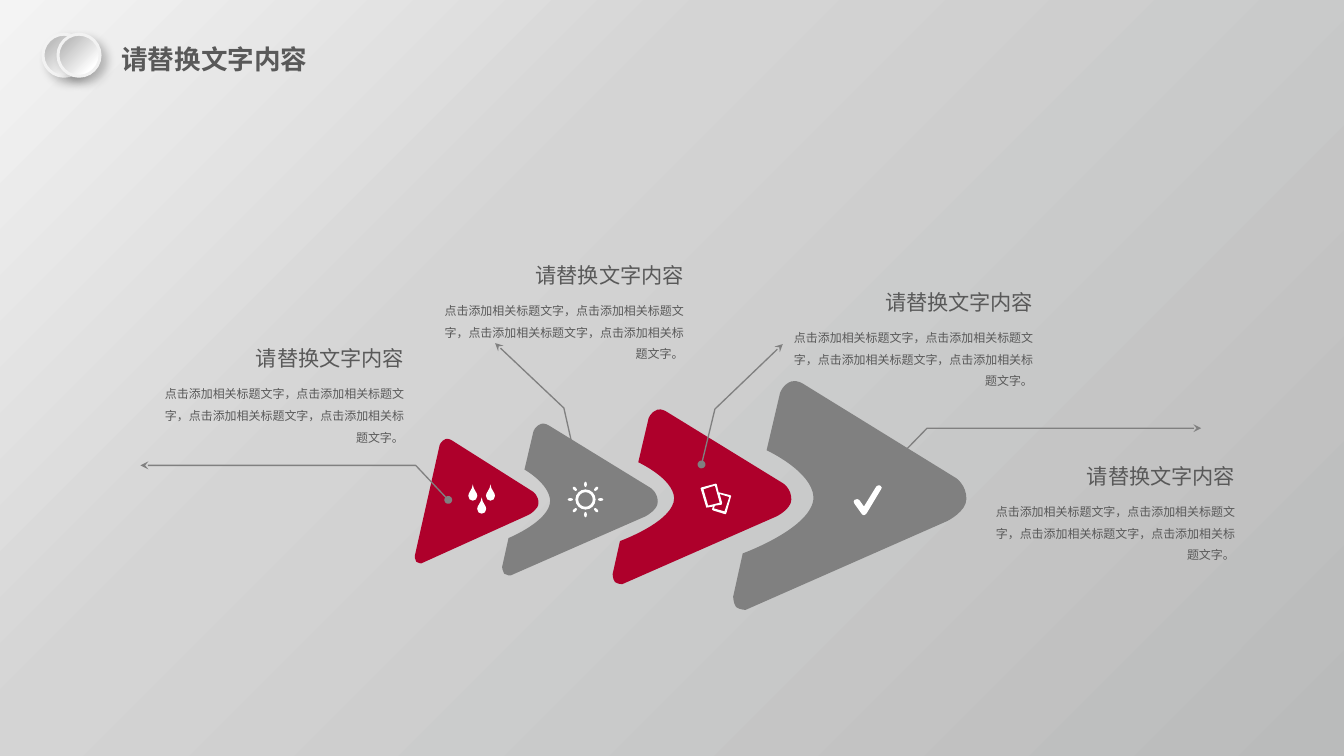
import math
from dataclasses import dataclass

from lxml import etree
from pptx import Presentation
from pptx.dml.color import RGBColor
from pptx.enum.shapes import MSO_SHAPE
from pptx.enum.text import MSO_ANCHOR, MSO_AUTO_SIZE, PP_ALIGN
from pptx.oxml.ns import qn
from pptx.util import Pt

OVAL = MSO_SHAPE.OVAL
TOP, MIDDLE = MSO_ANCHOR.TOP, MSO_ANCHOR.MIDDLE
LEFT, RIGHT = PP_ALIGN.LEFT, PP_ALIGN.RIGHT
FIT_SHAPE = MSO_AUTO_SIZE.SHAPE_TO_FIT_TEXT

RED = RGBColor(0xAE, 0x00, 0x2B)
GRAY = RGBColor(0x80, 0x80, 0x80)
TEXT_GRAY = RGBColor(0x59, 0x59, 0x59)
WHITE = RGBColor(0xFF, 0xFF, 0xFF)
RIM = RGBColor(0xF2, 0xF2, 0xF2)
BLACK = RGBColor(0x00, 0x00, 0x00)
SILVER = RGBColor(0xBF, 0xBF, 0xBF)
BACKGROUND_STOPS = [(0, RGBColor(0xF4, 0xF4, 0xF4)), (35, RGBColor(0xD4, 0xD4, 0xD4)),
                    (100, RGBColor(0xBA, 0xBB, 0xBB))]
DISC_STOPS = [(20, SILVER), (80, WHITE), (100, WHITE)]

TITLE = "请替换文字内容"
BODY = "，".join(["点击添加相关标题文字"] * 4) + "。"
ARROW_WIDTH, ARROW_HEIGHT = 175.7, 173.5
CIRCLE_HANDLE = 0.55

# A segment is an end point, or two control points and an end point.
Segment = tuple[float, ...]
Contour = list[Segment]


@dataclass
class Arrow:
    left: float
    top: float
    width: float
    height: float
    color: RGBColor
    notch_depth: float


ARROWS = [
    Arrow(552.4, 285.9, 175.7, 173.5, GRAY, 60.5),
    Arrow(461.6, 307.6, 134.6, 132.5, RED, 60.5),
    Arrow(378.3, 318.4, 117.2, 115.2, GRAY, 54.2),
    Arrow(312.5, 330, 93.2, 94.4, RED, 0),
]
LEADERS = [
    [(673.2, 348.5), (698.4, 322.6), (905, 322.6)],
    [(337.7, 376.6), (313.2, 350.6), (105.8, 350.6)],
    [(528.5, 349.9), (538.6, 308.2), (589.7, 259.2)],
    [(434.2, 349.2), (424.8, 307.4), (373, 258.5)],
]
CAPTION_CORNERS = [(95, 255.6), (305.7, 193), (568.9, 213.1), (721, 344.2)]
DROP_TIPS = [(356.2, 365), (369.5, 365), (362.9, 374.8)]
DROP = [(0, 0), (-0.4, 4.3, -3.4, 5.8, -3.4, 8.6), (-3.4, 10.8, -1.9, 12.2, 0, 12.2),
        (1.9, 12.2, 3.4, 10.8, 3.4, 8.6), (3.4, 5.8, 0.4, 4.3, 0, 0)]
CARDS = [
    [(550.1, 373), (541.4, 370.8), (540, 365), (539.3, 364.3), (528.5, 367.2),
     (527.8, 367.9), (532.1, 382.3), (532.8, 382.3), (537.1, 381.6), (536.4, 383.8),
     (537.1, 384.5), (546.5, 387.4), (547.2, 386.6), (550.8, 373.7)],
    [(529.9, 368.6), (538.6, 365.8), (542.2, 378.7), (533.5, 380.9)],
    [(545.8, 385.2), (537.8, 383), (538.6, 380.9), (543.6, 380.2), (544, 378.7),
     (542.2, 372.2), (549.4, 374.4)],
]
CHECK = [(650.9, 388.1), (650.2, 388.1, 649.4, 387.4, 649.4, 387.4), (643.7, 379.4),
         (643, 378.7, 643, 377.3, 643.7, 376.6), (645.1, 375.8, 646.6, 375.8, 647.3, 376.6),
         (650.9, 381.6), (660.2, 366.5), (661, 365.8, 662.4, 365, 663.1, 365.8),
         (664.6, 366.5, 664.6, 367.9, 663.8, 368.6), (653, 386.6),
         (652.3, 387.4, 651.6, 388.1, 650.9, 388.1)]


def place(contour: Contour, left: float, top: float, scale_x: float = 1, scale_y: float = 1,
          turn: float = 0) -> Contour:
    """Scale a contour, turn it about its own zero point and move it."""
    cosine, sine = math.cos(turn), math.sin(turn)
    placed = []
    for segment in contour:
        values = []
        for x, y in zip(segment[::2], segment[1::2]):
            x, y = x * scale_x, y * scale_y
            values += [left + x * cosine - y * sine, top + x * sine + y * cosine]
        placed.append(tuple(values))
    return placed


def arrow_outline(arrow: Arrow) -> Contour:
    depth = arrow.notch_depth
    notch = [(7.2, 131), (7.2, 131, depth, 111.6, depth, 88.6),
             (depth - 1, 69.1, 25.2, 53.3, 25.2, 53.3)] if depth else []
    contour = [
        (175.7, 90), (175.7, 99.4, 161.3, 106.6, 161.3, 106.6),
        (9.4, 173.5), (9.4, 173.5, 5, 173.5, 2.2, 171.4), (0, 168.5, 0, 163.4, 0, 163.4),
        *notch,
        (35.3, 10.1), (35.3, 10.1, 37.4, 3.6, 43.9, 1.4), (48.2, 0, 53.3, 3.6, 53.3, 3.6),
        (167.8, 74.2), (167.8, 74.2, 175.7, 79.2, 175.7, 90),
    ]
    return place(contour, arrow.left, arrow.top,
                 arrow.width / ARROW_WIDTH, arrow.height / ARROW_HEIGHT)


def sun_contours(x: float, y: float) -> list[Contour]:
    h = CIRCLE_HANDLE
    circle = [(1, 0), (1, h, h, 1, 0, 1), (-h, 1, -1, h, -1, 0),
              (-1, -h, -h, -1, 0, -1), (h, -1, 1, -h, 1, 0)]
    turns = [math.tau * ray / 8 for ray in range(8)]
    rays = [place(circle, x + 11.4 * math.cos(turn), y + 11.4 * math.sin(turn), 2, 1.1, turn)
            for turn in turns]
    return [*(place(circle, x, y, radius, radius) for radius in (7.6, 5.5)), *rays]


def add_outline(slide, contours: list[Contour], close: bool = True):
    builder = None
    for contour in contours:
        points = [(Pt(x), Pt(y)) for segment in contour
                  for x, y in zip(segment[::2], segment[1::2])]
        if builder is None:
            builder = slide.shapes.build_freeform(*points[0])
        else:
            builder.move_to(*points[0])
        builder.add_line_segments(points[1:], close=close)
    shape = builder.convert_to_shape()
    shape.shadow.inherit = False
    bend_curves(shape, contours)
    return shape


def bend_curves(shape, contours: list[Contour]) -> None:
    """Join the three lines laid through each curve's points into one cubic curve."""
    lines = iter(list(shape.element.iter(qn("a:lnTo"))))
    for contour in contours:
        for segment in contour[1:]:
            line = next(lines)
            if len(segment) == 2:
                continue
            line.tag = qn("a:cubicBezTo")
            for _ in range(2):
                extra = next(lines)
                line.append(extra[0])
                extra.getparent().remove(extra)


def add_filled(slide, contours: list[Contour], color: RGBColor) -> None:
    shape = add_outline(slide, contours)
    shape.fill.solid()
    shape.fill.fore_color.rgb = color
    shape.line.fill.background()


def add_leader(slide, points: Contour) -> None:
    shape = add_outline(slide, [points], close=False)
    shape.fill.background()
    shape.line.color.rgb = GRAY
    shape.line.width = Pt(1)
    line = shape.element.spPr.find(qn("a:ln"))
    etree.SubElement(line, qn("a:headEnd"), type="oval")
    etree.SubElement(line, qn("a:tailEnd"), type="stealth")


def set_gradient(fill, element, stops: list[tuple[int, RGBColor]]) -> None:
    fill.gradient()
    fill.gradient_angle = 315
    stop_list = element.find(".//" + qn("a:gsLst"))
    stop_list.clear()
    for position, color in stops:
        stop = etree.SubElement(stop_list, qn("a:gs"), pos=str(position * 1000))
        etree.SubElement(stop, qn("a:srgbClr"), val=str(color))


def add_disc(slide, left: float) -> None:
    shape = slide.shapes.add_shape(OVAL, Pt(left), Pt(25.8), Pt(31.7), Pt(31.7))
    set_gradient(shape.fill, shape.element.spPr, DISC_STOPS)
    shape.line.color.rgb = RIM
    shape.line.width = Pt(2.25)
    shape.shadow.inherit = False
    effects = shape.element.spPr.find(qn("a:effectLst"))
    shadow = etree.SubElement(effects, qn("a:outerShdw"), blurRad=str(Pt(7)),
                              dist=str(Pt(5.9)), dir="2700000", algn="tl", rotWithShape="0")
    color = etree.SubElement(shadow, qn("a:srgbClr"), val=str(BLACK))
    etree.SubElement(color, qn("a:alpha"), val="23000")


def add_text(slide, text: str, left: float, top: float, width: float, height: float, *,
             font: str, size: float, bold: bool = False, align=RIGHT, anchor=TOP,
             side_inset: float = 0, end_inset: float = 0, spacing: float = 1, wrap: bool = True):
    box = slide.shapes.add_textbox(Pt(left), Pt(top), Pt(width), Pt(height))
    frame = box.text_frame
    frame.word_wrap = wrap
    frame.vertical_anchor = anchor
    frame.margin_left = frame.margin_right = Pt(side_inset)
    frame.margin_top = frame.margin_bottom = Pt(end_inset)
    paragraph = frame.paragraphs[0]
    paragraph.alignment = align
    paragraph.line_spacing = spacing
    run = paragraph.add_run()
    run.text = text
    run.font.name, run.font.size, run.font.bold = font, Pt(size), bold
    run.font.color.rgb = TEXT_GRAY
    return frame


def main() -> None:
    presentation = Presentation()
    presentation.slide_width, presentation.slide_height = Pt(1012.5), Pt(569.5)
    slide = presentation.slides.add_slide(presentation.slide_layouts[6])
    set_gradient(slide.background.fill, slide.element, BACKGROUND_STOPS)

    for arrow in ARROWS:
        add_filled(slide, [arrow_outline(arrow)], arrow.color)
    for leader in LEADERS:
        add_leader(slide, leader)
    drops = [place(DROP, x, y) for x, y in DROP_TIPS]
    for icon in (drops, sun_contours(441.1, 376.3), CARDS, [CHECK]):
        add_filled(slide, icon, WHITE)

    for left, top in CAPTION_CORNERS:
        add_text(slide, TITLE, left, top, 209.5, 28.1, font="Lato", size=16,
                 anchor=MIDDLE, end_inset=7.9)
        add_text(slide, BODY, left + 28.5, top + 30.5, 180.7, 45.4, font="Arial", size=9,
                 spacing=1.5)
    title = add_text(slide, TITLE, 84.4, 28.8, 156.2, 31.7, font="Calibri", size=20, bold=True,
                     align=LEFT, side_inset=7.2, end_inset=3.6, wrap=False)
    title.auto_size = FIT_SHAPE
    for left in (32.4, 43.7):
        add_disc(slide, left)
    presentation.save("out.pptx")


if __name__ == "__main__":
    main()
